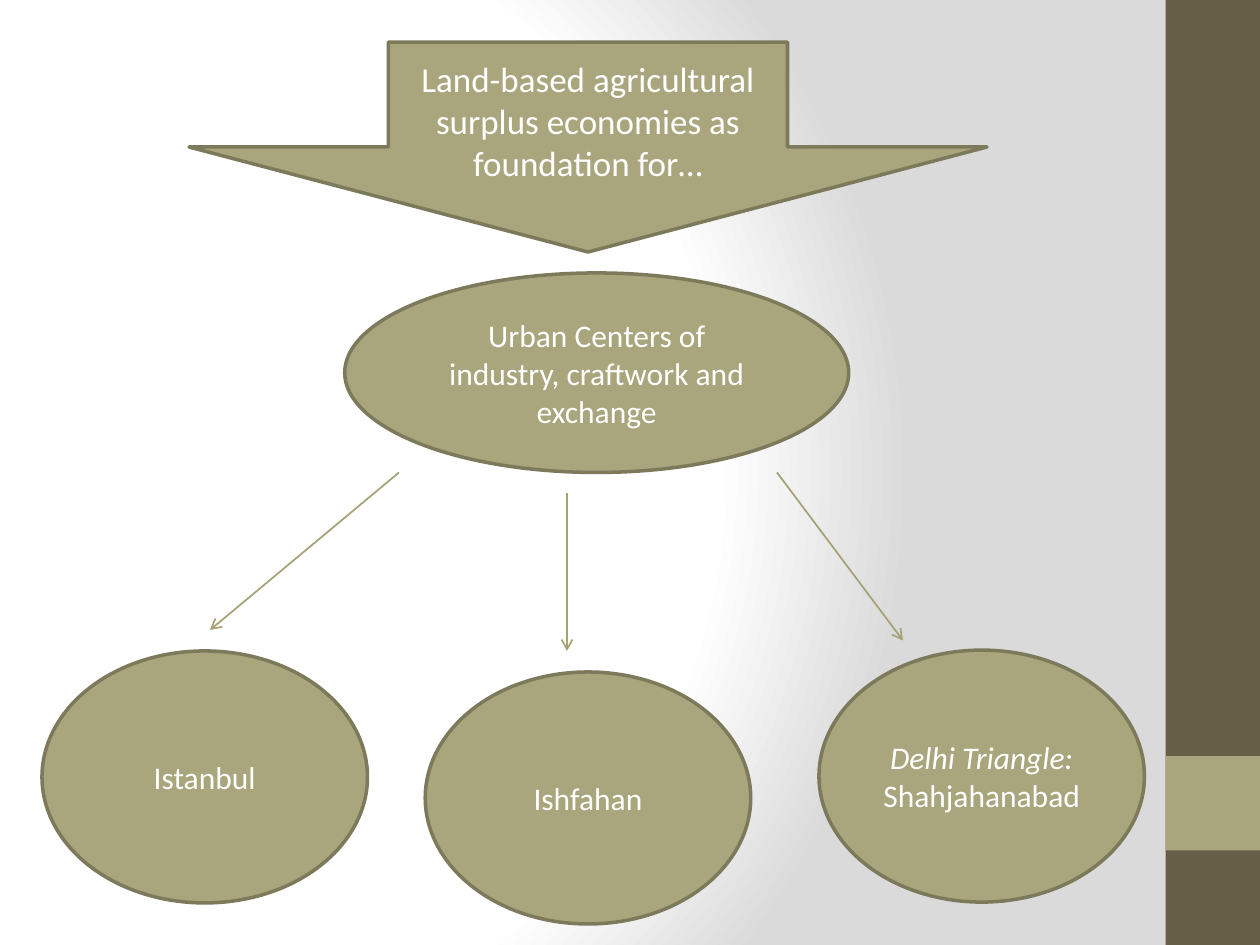
"""Build a slide on agrarian surplus feeding urban centers and three cities."""
from lxml import etree
from pptx import Presentation
from pptx.dml.color import RGBColor
from pptx.enum.shapes import MSO_CONNECTOR, MSO_SHAPE
from pptx.enum.text import MSO_ANCHOR, PP_ALIGN
from pptx.oxml import parse_xml
from pptx.oxml.ns import nsdecls, qn
from pptx.util import Pt

RECT, OVAL, ARROW = MSO_SHAPE.RECTANGLE, MSO_SHAPE.OVAL, MSO_SHAPE.DOWN_ARROW
STRAIGHT = MSO_CONNECTOR.STRAIGHT
MIDDLE, CENTER = MSO_ANCHOR.MIDDLE, PP_ALIGN.CENTER
COLORS = {
    "white": "FFFFFF", "grey": "DADADA", "brown": "675E47",
    "olive": "A9A57C", "outline": "7D7A5C", "arrow": "A6A278",
}


def rgb(name):
    return RGBColor.from_string(COLORS[name])


def add_shape(kind, x, y, w, h, fill, lines=(), size=18):
    sp = s.shapes.add_shape(kind, Pt(x), Pt(y), Pt(w), Pt(h))
    sp.shadow.inherit = False
    sp.fill.solid()
    sp.fill.fore_color.rgb = rgb(fill)
    if not lines:
        sp.line.fill.background()
        return sp
    sp.line.color.rgb = rgb("outline")
    sp.line.width = Pt(2)
    tf = sp.text_frame
    tf.word_wrap = True
    tf.vertical_anchor = MIDDLE
    tf.text = "\n".join(lines)
    for p in tf.paragraphs:
        p.alignment = CENTER
        p.font.name = "Calibri"
        p.font.size = Pt(size)
        p.font.color.rgb = rgb("white")
    return sp


prs = Presentation()
prs.slide_width, prs.slide_height = Pt(720), Pt(540)
s = prs.slides.add_slide(prs.slide_layouts[6])

s.background.fill.gradient()
grad = s.element.find(f".//{qn('a:gradFill')}")
for child in list(grad):
    grad.remove(child)
stops = "".join(
    f'<a:gs pos="{pos * 1000}"><a:srgbClr val="{COLORS[name]}"/></a:gs>'
    for pos, name in ((0, "white"), (75, "white"), (100, "grey"))
)
grad.append(parse_xml(f"<a:gsLst {nsdecls('a')}>{stops}</a:gsLst>"))
grad.append(parse_xml(
    f'<a:path {nsdecls("a")} path="circle">'
    '<a:fillToRect l="20000" t="50000" r="100000" b="50000"/></a:path>'
))

add_shape(RECT, 666, 0, 54, 540, "brown")
add_shape(RECT, 666, 432, 54, 54, "olive")

add_shape(OVAL, 197, 156, 288, 114, "olive",
          ["Urban Centers of industry, craftwork and exchange"])
add_shape(ARROW, 108, 24, 456, 120, "olive",
          ["Land-based agricultural surplus economies as foundation for…"], 20)

for x1, y1, x2, y2 in ((228, 270, 120, 360), (444, 270, 516, 366), (324, 282, 324, 372)):
    cx = s.shapes.add_connector(STRAIGHT, Pt(x1), Pt(y1), Pt(x2), Pt(y2))
    cx.line.color.rgb = rgb("arrow")
    cx.line.width = Pt(1)
    etree.SubElement(cx.line._get_or_add_ln(), qn("a:tailEnd"), type="arrow")
    etree.SubElement(cx._element.spPr, qn("a:effectLst"))

cities = (
    (24, 372, ["Istanbul"]),
    (243, 384, ["Ishfahan"]),
    (468, 371.5, ["Delhi Triangle:", "Shahjahanabad"]),
)
for x, y, lines in cities:
    sp = add_shape(OVAL, x, y, 186, 144, "olive", lines)
sp.text_frame.paragraphs[0].font.italic = True

prs.save("out.pptx")
